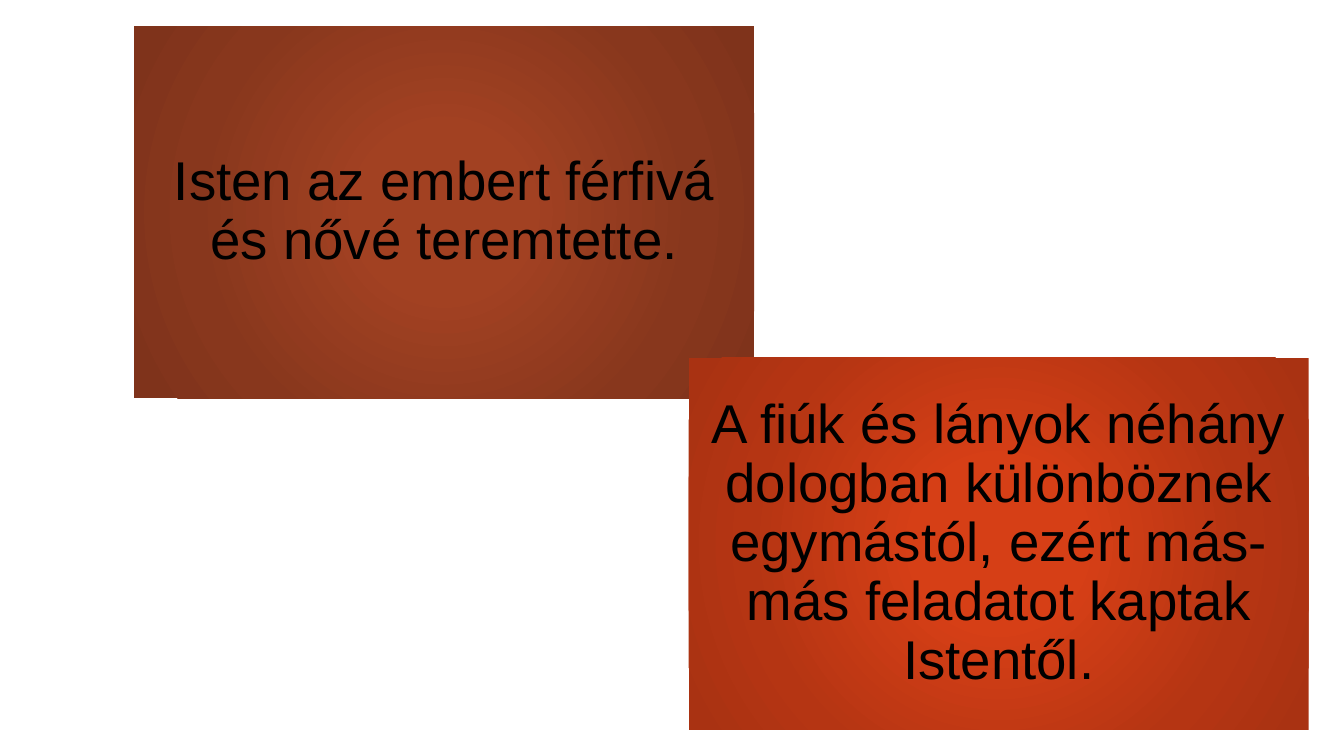
from dataclasses import dataclass

from pptx import Presentation
from pptx.dml.color import RGBColor
from pptx.enum.shapes import MSO_SHAPE as Preset
from pptx.enum.text import MSO_ANCHOR as Anchor, PP_ALIGN as Align
from pptx.oxml import parse_xml
from pptx.oxml.ns import nsdecls, qn
from pptx.shapes.autoshape import Shape
from pptx.slide import Slide
from pptx.util import Emu, Pt

EMU_PER_PX = 9144  # 100 px to the inch
CARD_WIDTH, CARD_HEIGHT, INSET = 615, 369, 16
STOP_PERCENTS = (0, 23, 69, 97)


@dataclass(frozen=True)
class Card:
    left: int
    top: int
    centre: str
    middle: str
    edge: str
    text: str


CARDS = (
    Card(133, 26, "A24122", "88371D", "7F331B",
         "Isten az embert férfivá és nővé teremtette."),
    Card(683, 355, "D63F16", "B53513", "A93212",
         "A fiúk és lányok néhány dologban különböznek egymástól, "
         "ezért más-más feladatot kaptak Istentől."),
)


def px(length: int) -> Emu:
    return Emu(length * EMU_PER_PX)


def color(value: str) -> RGBColor:
    return RGBColor.from_string(value)


def fill_radial(shape: Shape, card: Card) -> None:
    """Replace the shape's fill with a circular gradient from its centre."""
    colors = (card.centre, card.centre, card.middle, card.edge)
    stops = "".join(
        f'<a:gs pos="{percent * 1000}"><a:srgbClr val="{value}"/></a:gs>'
        for percent, value in zip(STOP_PERCENTS, colors)
    )
    gradient = parse_xml(
        f'<a:gradFill {nsdecls("a")} rotWithShape="1"><a:gsLst>{stops}</a:gsLst>'
        '<a:path path="circle">'
        '<a:fillToRect l="50000" t="50000" r="50000" b="50000"/>'
        '</a:path></a:gradFill>'
    )
    shape.fill.solid()
    properties = shape.element.spPr
    properties.replace(properties.find(qn("a:solidFill")), gradient)


def write_text(shape: Shape, text: str) -> None:
    frame = shape.text_frame
    frame_format = {"word_wrap": True, "vertical_anchor": Anchor.MIDDLE}
    for side in ("left", "top", "right", "bottom"):
        frame_format[f"margin_{side}"] = px(INSET)
    for name, value in frame_format.items():
        setattr(frame, name, value)

    paragraph = frame.paragraphs[0]
    paragraph.text = text
    for name, value in {"alignment": Align.CENTER, "line_spacing": 0.9}.items():
        setattr(paragraph, name, value)

    font = paragraph.runs[0].font
    for name, value in {"name": "Arial", "size": Pt(39)}.items():
        setattr(font, name, value)
    font.color.rgb = color("000000")


def draw_card(slide: Slide, card: Card) -> None:
    shape = slide.shapes.add_shape(
        Preset.RECTANGLE,
        px(card.left), px(card.top), px(CARD_WIDTH), px(CARD_HEIGHT),
    )
    shape.shadow.inherit = False
    shape.line.fill.background()
    fill_radial(shape, card)
    write_text(shape, card.text)


def main() -> None:
    presentation = Presentation()
    presentation.slide_width, presentation.slide_height = px(1333), px(750)
    slide = presentation.slides.add_slide(presentation.slide_layouts[6])
    for card in CARDS:
        draw_card(slide, card)
    presentation.save("out.pptx")


if __name__ == "__main__":
    main()
